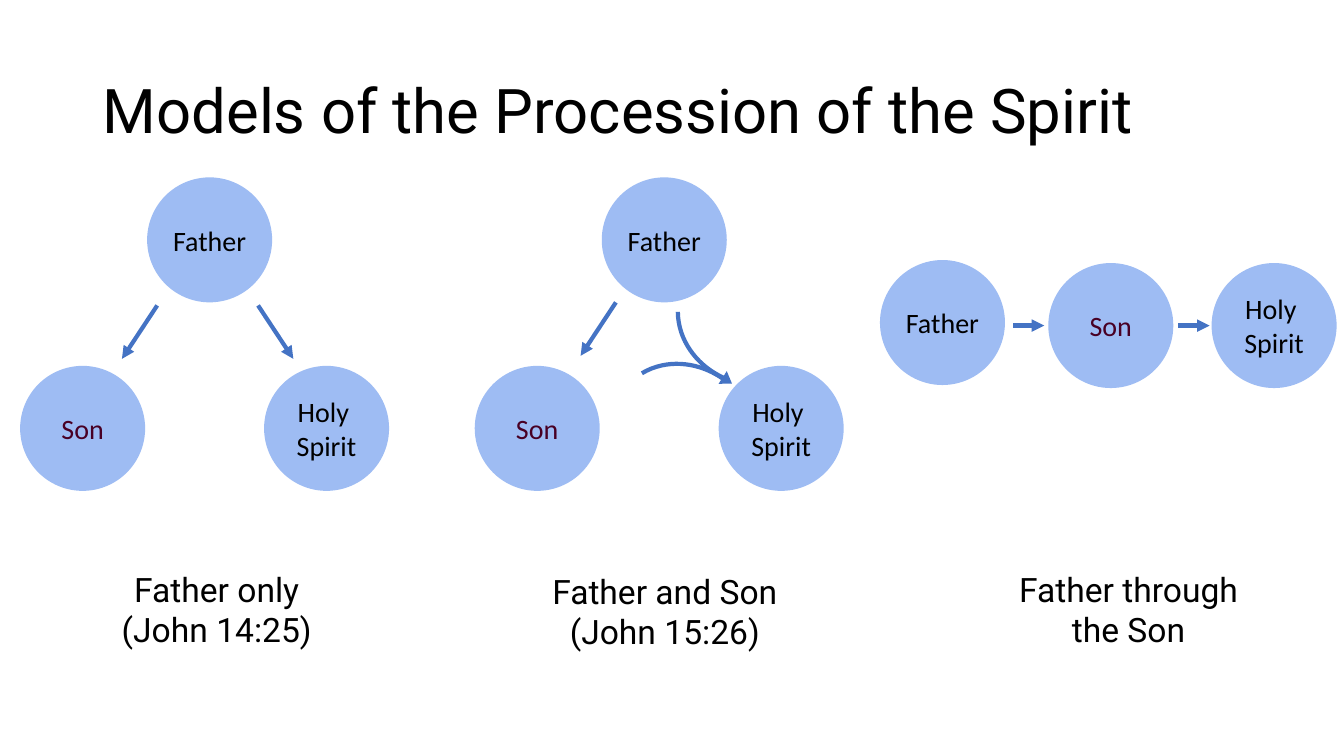
from dataclasses import dataclass

from lxml import etree
from pptx import Presentation
from pptx import util as u
from pptx.dml.color import RGBColor
from pptx.enum import shapes, text
from pptx.oxml.ns import qn

CELL = 0.1  # side of a grid cell in inches
COLS, ROWS = 133.33, 75
DISC = 12.4  # diameter of a circle in cells
STEP = 45.1  # columns from the first model to the second

HUES = {"disc": "9EBCF3", "line": "4473C4", "ink": "000000", "son": "480024"}
HEAD = {"name": "Roboto", "size": u.Pt(44)}
NOTE = {"name": "Roboto", "size": u.Pt(24)}
NAME = {"name": "Calibri", "size": u.Pt(20)}
FLUSH = {"margin_left": 0, "margin_right": 0, "margin_top": 0, "margin_bottom": 0,
         "word_wrap": True, "vertical_anchor": text.MSO_ANCHOR.MIDDLE}


@dataclass(frozen=True)
class Disc:
    lines: tuple[str, ...]
    col: float
    row: float
    hue: str = "ink"


@dataclass(frozen=True)
class Arrow:
    col: float
    row: float
    right: float
    down: float


@dataclass(frozen=True)
class Arc:
    col: float
    row: float
    turn: float
    flip: bool = False


@dataclass(frozen=True)
class Note:
    lines: tuple[str, ...]
    col: float
    row: float
    wide: float


def grid(*cells: float) -> list[int]:
    return [u.Inches(cell * CELL) for cell in cells]


def tint(hue: str) -> RGBColor:
    return RGBColor.from_string(HUES[hue])


def apply(item, form: dict) -> None:
    for key, value in form.items():
        setattr(item, key, value)


def write(frame, lines: tuple[str, ...], font: dict, hue: str, align) -> None:
    for i, line in enumerate(lines):
        para = frame.paragraphs[0] if i == 0 else frame.add_paragraph()
        para.alignment = align
        run = para.add_run()
        run.text = line
        apply(run.font, font)
        run.font.color.rgb = tint(hue)


def add_disc(slide, disc: Disc) -> None:
    shape = slide.shapes.add_shape(shapes.MSO_SHAPE.OVAL,
                                   *grid(disc.col, disc.row, DISC, DISC))
    shape.shadow.inherit = False
    shape.fill.solid()
    shape.fill.fore_color.rgb = tint("disc")
    shape.line.fill.background()
    apply(shape.text_frame, FLUSH)
    write(shape.text_frame, disc.lines, NAME, disc.hue, text.PP_ALIGN.CENTER)


def add_arrow(slide, arrow: Arrow) -> None:
    ends = grid(arrow.col, arrow.row, arrow.col + arrow.right, arrow.row + arrow.down)
    link = slide.shapes.add_connector(shapes.MSO_CONNECTOR.STRAIGHT, *ends)
    link.line.color.rgb = tint("line")
    link.line.width = u.Pt(3)
    etree.SubElement(link.line._get_or_add_ln(), qn("a:tailEnd"), type="triangle")
    etree.SubElement(link._element.spPr, qn("a:effectLst"))


def add_arc(slide, arc: Arc) -> None:
    shape = slide.shapes.add_shape(shapes.MSO_SHAPE.ARC,
                                   *grid(arc.col, arc.row, 13.9, 15.5))
    shape.shadow.inherit = False
    shape.adjustments[0], shape.adjustments[1] = 168.93, 209
    shape.rotation = arc.turn
    if arc.flip:
        shape._element.spPr.find(qn("a:xfrm")).set("flipV", "1")
    shape.fill.background()
    shape.line.color.rgb = tint("line")
    shape.line.width = u.Pt(3)


def add_tip(slide) -> None:
    tip = slide.shapes.add_shape(shapes.MSO_SHAPE.ISOSCELES_TRIANGLE,
                                 *grid(71.4, 37.2, 1.5, 1.1))
    tip.shadow.inherit = False
    tip.rotation = 122.9
    tip.fill.solid()
    tip.fill.fore_color.rgb = tint("line")
    tip.line.fill.background()


def add_note(slide, note: Note) -> None:
    box = slide.shapes.add_textbox(*grid(note.col, note.row, note.wide, 9.1))
    apply(box.text_frame, {"word_wrap": True,
                           "auto_size": text.MSO_AUTO_SIZE.SHAPE_TO_FIT_TEXT})
    write(box.text_frame, note.lines, NOTE, "ink", text.PP_ALIGN.CENTER)


def add_title(slide) -> None:
    title = slide.shapes.title
    title.left, title.top, title.width, title.height = grid(9.2, 4, 115, 14.5)
    apply(title.text_frame, {"vertical_anchor": text.MSO_ANCHOR.MIDDLE,
                             "word_wrap": True,
                             "auto_size": text.MSO_AUTO_SIZE.NONE})
    write(title.text_frame, ("Models of the Procession of the Spirit",), HEAD,
          "ink", text.PP_ALIGN.LEFT)
    title.text_frame.paragraphs[0].line_spacing = 0.9


FATHER, SON, SPIRIT = ("Father",), ("Son",), ("Holy ", "Spirit")


def triad(col: float) -> list[Disc]:
    return [Disc(FATHER, col + 14.6, 17.6), Disc(SPIRIT, col + 26.2, 36.3),
            Disc(SON, col + 2, 36.3, "son")]


DISCS = [*triad(0), *triad(STEP),
         Disc(FATHER, 87.3, 25.8), Disc(SON, 104, 26.1, "son"),
         Disc(SPIRIT, 120.2, 26.1)]
ARROWS = [Arrow(15.6, 30.3, -3.5, 5.3), Arrow(25.6, 30.3, 3.5, 5.3),
          Arrow(61.1, 30, -3.5, 5.3),
          Arrow(100.5, 32.3, 3.1, 0), Arrow(116.9, 32.3, 3.1, 0)]
ARCS = [Arc(61, 35.7, 314.8), Arc(68, 23.5, 103.9, True)]
NOTES = [Note(("Father only", "(John 14:25)"), 4.3, 55.9, 34.4),
         Note(("Father and Son", "(John 15:26)"), 53.7, 56.1, 24.5),
         Note(("Father through the Son",), 99.7, 55.9, 24.5)]


def main() -> None:
    deck = Presentation()
    deck.slide_width, deck.slide_height = grid(COLS, ROWS)
    slide = deck.slides.add_slide(deck.slide_layouts[5])
    add_title(slide)

    # Three models: circles, then the arrows between them
    for disc in DISCS:
        add_disc(slide, disc)
    for arrow in ARROWS:
        add_arrow(slide, arrow)

    # Two curves that meet in one arrowhead
    add_tip(slide)
    for arc in ARCS:
        add_arc(slide, arc)

    # Captions
    for note in NOTES:
        add_note(slide, note)
    deck.save("out.pptx")


if __name__ == "__main__":
    main()
